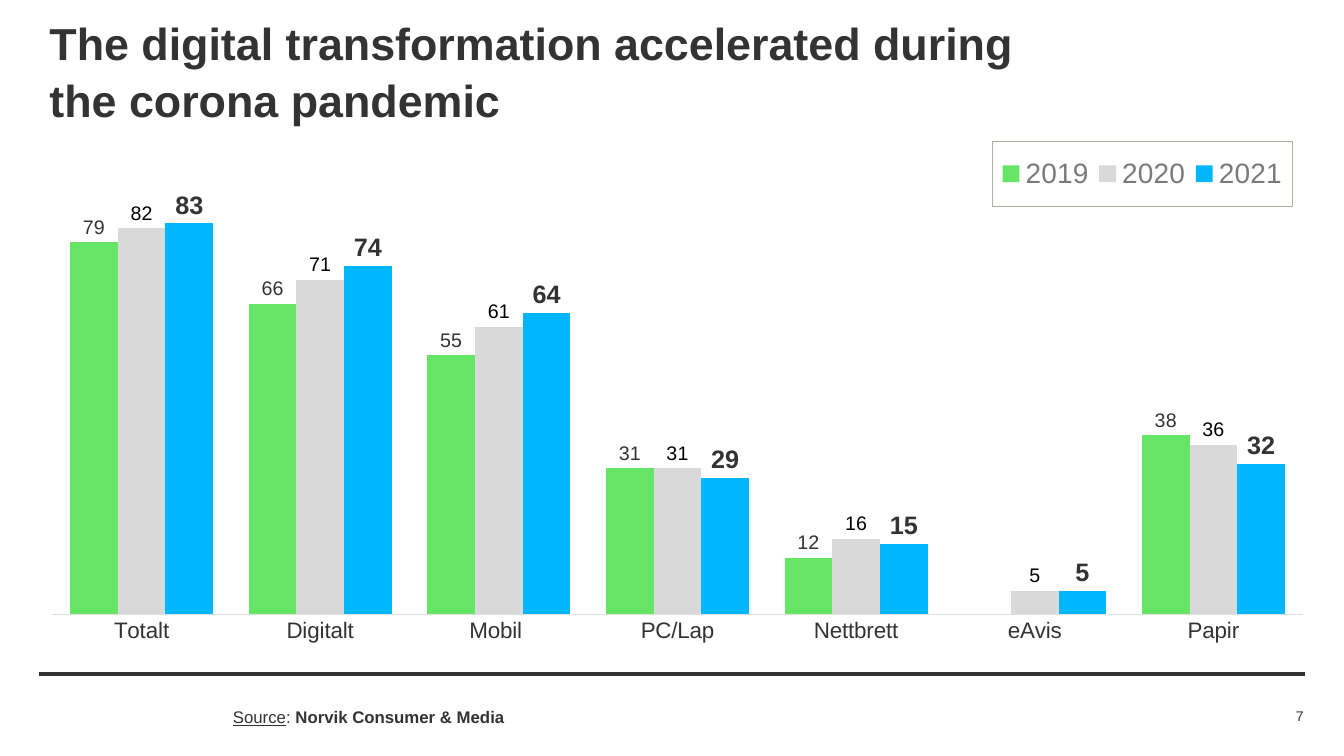
from lxml import etree
from pptx import Presentation
from pptx.chart.data import CategoryChartData as ChartData
from pptx.dml.color import RGBColor
from pptx.enum.chart import XL_CHART_TYPE as Kind, XL_LABEL_POSITION as Spot
from pptx.enum.chart import XL_LEGEND_POSITION as Side, XL_TICK_MARK as Tick
from pptx.enum.shapes import MSO_CONNECTOR as Wire
from pptx.enum.text import MSO_ANCHOR as Anchor, PP_ALIGN as Align
from pptx.oxml import parse_xml
from pptx.oxml.ns import nsdecls, qn
from pptx.util import Inches, Pt

DARK = RGBColor(0x33, 0x33, 0x33)
BLACK = RGBColor(0, 0, 0)
GREEN = RGBColor(0x66, 0xE4, 0x66)
SILVER = RGBColor(0xD9, 0xD9, 0xD9)
BLUE = RGBColor(0, 0xB6, 0xFF)
GREY = RGBColor(0x7A, 0x7A, 0x7A)
PALE = RGBColor(0xE0, 0xE0, 0xE0)
FRAME = "B0B0A0"

TITLE = ["The digital transformation accelerated during", "the corona pandemic"]
CATS = ["Totalt", "Digitalt", "Mobil ", "PC/Lap", "Nettbrett", "eAvis", "Papir"]
SERIES = [
    ("2019", (79, 66, 55, 31, 12, None, 38), GREEN, dict(size=14, color=DARK)),
    ("2020", (82, 71, 61, 31, 16, 5, 36), SILVER, dict(size=14, color=BLACK)),
    ("2021", (83, 74, 64, 29, 15, 5, 32), BLUE, dict(size=18, color=DARK, bold=True)),
]
SOURCE = [("Source", dict(underline=True)), (": ", {}),
          ("Norvik Consumer & Media", dict(bold=True))]
NOTES = [
    ((2.31, 7, 7.09, 0.22), SOURCE, 12, Align.LEFT),
    ((11.87, 6.99, 1.06, 0.22), [("7", {})], 10, Align.RIGHT),
]
PLOT = dict(x=0.011, y=0.029, w=0.982, h=0.883)
KEY = dict(x=0.749, y=0.025, w=0.236, h=0.122)


def put(item, **vals):
    for name, val in vals.items():
        setattr(item, name, val)


def style(font, size, color=DARK, **more):
    put(font, name="Arial", size=Pt(size), **more)
    font.color.rgb = color


def place(shape, *box):
    put(shape, **dict(zip(("left", "top", "width", "height"), map(Inches, box))))


def layout(spots, inner=False):
    rows = '<c:layoutTarget val="inner"/>' if inner else ""
    rows += "".join(f'<c:{k}Mode val="edge"/>' for k in "xy")
    rows += "".join(f'<c:{k} val="{v}"/>' for k, v in spots.items())
    return parse_xml(f'<c:layout {nsdecls("c")}><c:manualLayout>{rows}'
                     '</c:manualLayout></c:layout>')


def add_title(slide):
    title = slide.shapes.title
    place(title, 0.39, 0.06, 12.95, 1.11)
    frame = title.text_frame
    put(frame, vertical_anchor=Anchor.TOP, margin_top=Inches(0.1), word_wrap=True)
    frame.text = "\n".join(TITLE)
    for para in frame.paragraphs:
        para.alignment = Align.LEFT
        style(para.font, 32, bold=True)
    frame.paragraphs[0].space_after = Pt(2)


def add_rule(slide):
    ends = map(Inches, (0.39, 6.69, 12.94, 6.69))
    rule = slide.shapes.add_connector(Wire.STRAIGHT, *ends)
    rule.line.width = Pt(3)
    rule.line.color.rgb = DARK
    etree.SubElement(rule._element.spPr, qn("a:effectLst"))


def add_bars(slide):
    data = ChartData()
    data.categories = CATS
    for name, vals, *_ in SERIES:
        data.add_series(name, vals)
    box = map(Inches, (0.38, 1.27, 12.63, 5.29))
    chart = slide.shapes.add_chart(Kind.COLUMN_CLUSTERED, *box, data).chart
    put(chart, has_title=False, has_legend=True)
    style(chart.font, 16)
    put(chart.value_axis, visible=False, minimum_scale=0, maximum_scale=100,
        has_major_gridlines=False)
    axis = chart.category_axis
    put(axis, major_tick_mark=Tick.NONE, minor_tick_mark=Tick.NONE)
    style(axis.tick_labels.font, 16)
    axis.format.line.width = Pt(0.75)
    axis.format.line.color.rgb = PALE
    plot = chart.plots[0]
    put(plot, gap_width=75, overlap=0, vary_by_categories=False)
    for bars, (_, _, color, look) in zip(plot.series, SERIES):
        bars.format.fill.solid()
        bars.format.fill.fore_color.rgb = color
        labels = bars.data_labels
        put(labels, show_value=True, position=Spot.OUTSIDE_END)
        style(labels.font, **look)
    area = chart._chartSpace.chart.plotArea
    for old in area.findall(qn("c:layout")):
        area.remove(old)
    area.insert(0, layout(PLOT, True))
    add_key(chart.legend)


def add_key(key):
    put(key, position=Side.RIGHT, include_in_layout=False)
    style(key.font, 20, GREY)
    node = key._element
    for old in node.findall(qn("c:layout")):
        node.remove(old)
    node.find(qn("c:legendPos")).addnext(layout(KEY))
    edge = parse_xml(f'<c:spPr {nsdecls("c", "a")}><a:ln w="9525"><a:solidFill>'
                     f'<a:srgbClr val="{FRAME}"/></a:solidFill></a:ln></c:spPr>')
    node.find(qn("c:txPr")).addprevious(edge)


def add_note(slide, box, runs, size, align):
    frame = slide.shapes.add_textbox(*map(Inches, box)).text_frame
    put(frame, word_wrap=True, vertical_anchor=Anchor.MIDDLE, margin_left=0,
        margin_right=0, margin_top=0, margin_bottom=0)
    para = frame.paragraphs[0]
    para.alignment = align
    for text, look in runs:
        run = para.add_run()
        run.text = text
        style(run.font, size, **look)


def main():
    deck = Presentation()
    put(deck, slide_width=Inches(13.33), slide_height=Inches(7.5))
    slide = deck.slides.add_slide(deck.slide_layouts[5])
    add_rule(slide)
    add_title(slide)
    add_bars(slide)
    for note in NOTES:
        add_note(slide, *note)
    deck.save("out.pptx")


if __name__ == "__main__":
    main()
